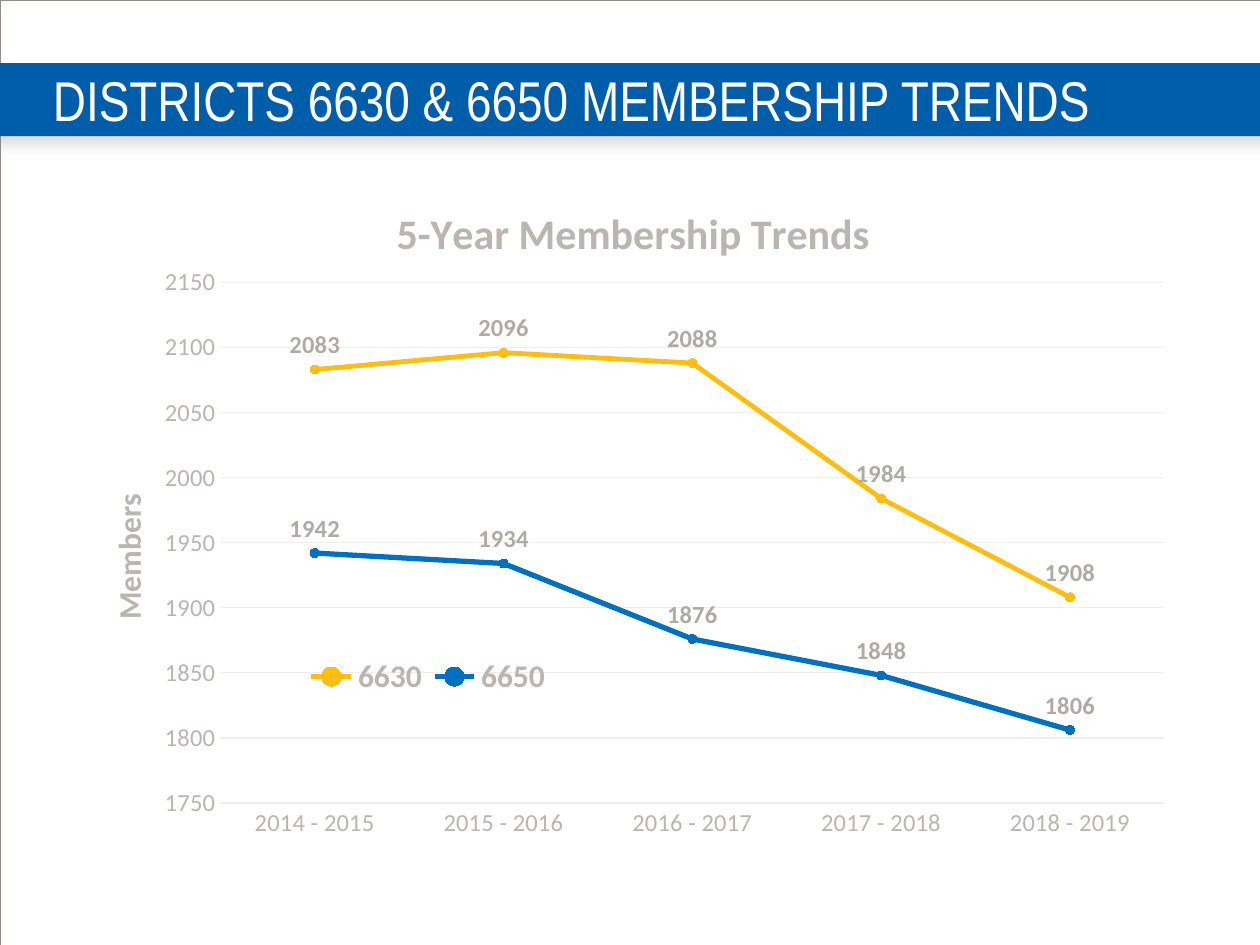
import pptx
import pptx.chart.data
import pptx.dml.color
import pptx.enum.chart
import pptx.enum.shapes
import pptx.enum.text
import pptx.oxml
import pptx.oxml.ns
import pptx.util
from dataclasses import dataclass

Inches = pptx.util.Inches
Pt = pptx.util.Pt
qn = pptx.oxml.ns.qn


@dataclass(frozen=True)
class Theme:
    title_font: str = "Arial Narrow"
    chart_font: str = "Calibri"
    white: str = "FFFFFF"
    banner: str = "005DAA"
    frame: str = "958D85"
    muted: str = "BAB5B0"
    data_label: str = "B0AAA4"
    grid: str = "EFEEED"
    gold: str = "FEBD11"
    blue: str = "0070C0"
    shadow: str = "808080"
    title_size: int = 32
    chart_title_size: int = 24
    emphasis_size: int = 18
    label_size: int = 14
    base_size: int = 10


def rgb(value):
    return pptx.dml.color.RGBColor.from_string(value)


def place(element, index, **fractions):
    """Give a chart part a manual layout, in fractions of the chart, at a child index."""
    for old in element.findall(qn("c:layout")):
        element.remove(old)
    target = '<c:layoutTarget val="inner"/>' if index == 0 else ""
    modes = "".join(f'<c:{key}Mode val="edge"/>' for key in ("x", "y"))
    values = "".join(f'<c:{key} val="{value}"/>' for key, value in fractions.items())
    element.insert(index, pptx.oxml.parse_xml(
        f'<c:layout {pptx.oxml.ns.nsdecls("c")}><c:manualLayout>'
        f"{target}{modes}{values}</c:manualLayout></c:layout>"))


class SlideBuilder:
    def __init__(self, deck, theme):
        self.theme = theme
        self.slide = deck.slides.add_slide(deck.slide_layouts[5])

    def style_font(self, font, size, color, bold=False, name=None):
        font.name = name or self.theme.chart_font
        font.size = Pt(size)
        font.bold = bold
        font.color.rgb = rgb(color)

    def rectangle(self, left, top, width, height, fill=None, line=None):
        box = self.slide.shapes.add_shape(
            pptx.enum.shapes.MSO_SHAPE.RECTANGLE,
            Inches(left), Inches(top), Inches(width), Inches(height))
        box.shadow.inherit = False
        if fill:
            box.fill.solid()
            box.fill.fore_color.rgb = rgb(fill)
        else:
            box.fill.background()
        if line:
            box.line.color.rgb = rgb(line)
            box.line.width = Pt(0.13)
        else:
            box.line.fill.background()
        return box

    def drop_shadow(self, box):
        effects = box._element.spPr.find(qn("a:effectLst"))
        effects.append(pptx.oxml.parse_xml(
            f'<a:outerShdw {pptx.oxml.ns.nsdecls("a")} blurRad="{Pt(7)}" dist="{Pt(4.8)}" '
            f'dir="5400000" algn="t" rotWithShape="0"><a:srgbClr val="{self.theme.shadow}">'
            '<a:alpha val="25000"/></a:srgbClr></a:outerShdw>'))

    def title(self, text, left, top, width, height):
        title = self.slide.shapes.title
        title.left, title.top = Inches(left), Inches(top)
        title.width, title.height = Inches(width), Inches(height)
        frame = title.text_frame
        frame.text = text
        frame.word_wrap = True
        frame.auto_size = pptx.enum.text.MSO_AUTO_SIZE.NONE
        frame.vertical_anchor = pptx.enum.text.MSO_ANCHOR.MIDDLE
        frame.margin_left = frame.margin_right = frame.margin_top = frame.margin_bottom = 0
        para = frame.paragraphs[0]
        para.alignment = pptx.enum.text.PP_ALIGN.LEFT
        self.style_font(para.runs[0].font, self.theme.title_size, self.theme.white,
                        name=self.theme.title_font)
        # The title belongs in front of the banner.
        self.slide.shapes._spTree.append(title._element)

    def line_chart(self, categories, series, left, top, width, height):
        """Add a marked line chart; series holds (name, values, color, line width)."""
        data = pptx.chart.data.CategoryChartData()
        data.categories = categories
        for name, values, _, _ in series:
            data.add_series(name, values)
        chart = self.slide.shapes.add_chart(
            pptx.enum.chart.XL_CHART_TYPE.LINE_MARKERS,
            Inches(left), Inches(top), Inches(width), Inches(height), data).chart
        self.style_font(chart.font, self.theme.base_size, self.theme.frame)
        chart.plots[0].vary_by_categories = False
        for line, (_, _, color, weight) in zip(chart.plots[0].series, series):
            self.style_series(line, color, weight)
        place(chart._chartSpace.chart.plotArea, 0, x=0.14, y=0.154, w=0.84, h=0.698)
        return chart

    def style_series(self, series, color, weight):
        series.smooth = False
        series.format.line.color.rgb = rgb(color)
        series.format.line.width = Pt(weight)
        marker = series.marker
        marker.style = pptx.enum.chart.XL_MARKER_STYLE.CIRCLE
        marker.size = 5
        marker.format.fill.solid()
        marker.format.fill.fore_color.rgb = rgb(color)
        marker.format.line.color.rgb = rgb(color)
        labels = series.data_labels
        labels.show_value = True
        labels.position = pptx.enum.chart.XL_LABEL_POSITION.ABOVE
        self.style_font(labels.font, self.theme.label_size, self.theme.data_label, True)

    def chart_text(self, title, text, size, x, y):
        title.text_frame.text = text
        font = title.text_frame.paragraphs[0].runs[0].font
        self.style_font(font, size, self.theme.muted, True)
        place(title._element, 1, x=x, y=y)

    def axes(self, chart, minimum, maximum, step, value_title):
        for axis in (chart.category_axis, chart.value_axis):
            axis.major_tick_mark = axis.minor_tick_mark = pptx.enum.chart.XL_TICK_MARK.NONE
            self.style_font(axis.tick_labels.font, self.theme.label_size, self.theme.muted)
        values = chart.value_axis
        values.minimum_scale, values.maximum_scale = minimum, maximum
        values.major_unit = step
        values.format.line.fill.background()
        for line in (chart.category_axis.format.line, values.major_gridlines.format.line):
            line.color.rgb = rgb(self.theme.grid)
            line.width = Pt(0.75)
        self.chart_text(values.axis_title, value_title, self.theme.emphasis_size, 0.034, 0.43)
        body = values.axis_title.text_frame._txBody.bodyPr
        body.set("rot", "-5400000")
        body.set("vert", "horz")

    def legend(self, chart):
        chart.has_legend = True
        legend = chart.legend
        legend.position = pptx.enum.chart.XL_LEGEND_POSITION.BOTTOM
        legend.include_in_layout = False
        self.style_font(legend.font, self.theme.emphasis_size, self.theme.muted, True)
        place(legend._element, 1, x=0.21, y=0.655, w=0.23, h=0.055)


def main():
    theme = Theme()
    deck = pptx.Presentation()
    deck.slide_width, deck.slide_height = Inches(10), Inches(7.5)
    page = SlideBuilder(deck, theme)

    page.rectangle(0, 0, 10, 7.5, line=theme.frame)
    page.drop_shadow(page.rectangle(-0.08, 0.5, 10.17, 0.58, fill=theme.banner))
    page.title("DISTRICTS 6630 & 6650 MEMBERSHIP TRENDS", 0.42, 0.5, 9.58, 0.58)

    years = [f"{year} - {year + 1}" for year in range(2014, 2019)]
    districts = [
        ("6630", (2083, 2096, 2088, 1984, 1908), theme.gold, 2.75),
        ("6650", (1942, 1934, 1876, 1848, 1806), theme.blue, 3),
    ]
    chart = page.line_chart(years, districts, 0.5, 1.33, 8.92, 5.92)
    chart.has_title = True
    page.chart_text(chart.chart_title, "5-Year Membership Trends",
                    theme.chart_title_size, 0.29, 0.04)
    page.axes(chart, 1750, 2150, 50, "Members")
    page.legend(chart)

    deck.save("out.pptx")


if __name__ == "__main__":
    main()
